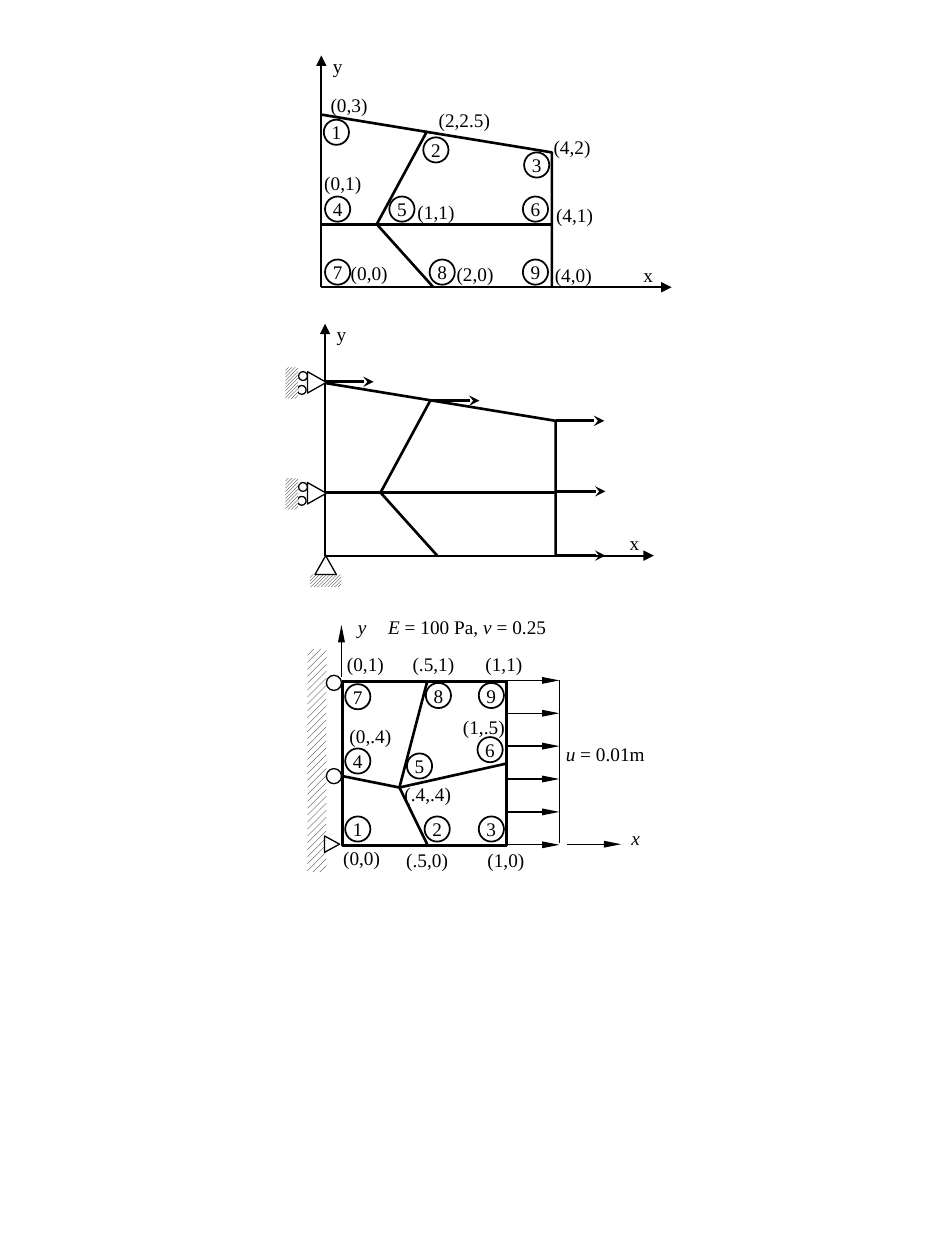
"""Build a page with three finite-element patch-test diagrams."""
from lxml.etree import SubElement
from pptx import Presentation
from pptx.dml.color import RGBColor
from pptx.enum.dml import MSO_PATTERN
from pptx.enum.shapes import MSO_CONNECTOR, MSO_SHAPE
from pptx.enum.text import MSO_ANCHOR, PP_ALIGN
from pptx.oxml.ns import qn
from pptx.util import Inches, Pt

COLUMNS, ROWS = 75, 100
BLACK, WHITE = "000000", "FFFFFF"


def colour(value):
    return RGBColor.from_string(value)


class Diagram:
    """Draws diagram parts on a grid of 75 columns by 100 rows."""

    font, size = "Times New Roman", 11
    thin, medium, thick = 0.75, 1, 1.5

    def __init__(self, deck, page):
        self.page = page
        self.column = deck.slide_width / COLUMNS
        self.row = deck.slide_height / ROWS

    def start_group(self):
        self.shapes = self.page.shapes.add_group_shape().shapes

    def place(self, left, top):
        return round(left * self.column), round(top * self.row)

    def outline(self, shape, width):
        shape.line.color.rgb = colour(BLACK)
        shape.line.width = Pt(width)

    def set_text(self, frame, spans, align):
        frame.margin_left = frame.margin_right = frame.margin_top = frame.margin_bottom = 0
        frame.word_wrap = True
        para = frame.paragraphs[0]
        para.alignment = align
        para.font.name, para.font.size = self.font, Pt(self.size)
        para.font.color.rgb = colour(BLACK)
        for text, italic in spans:
            span = para.add_run()
            span.text = text
            if italic:
                span.font.italic = True

    def label(self, text, left, top, width=4.8, height=1.8, italic=False):
        self.formula([(text, italic)], left, top, width, height, PP_ALIGN.CENTER)

    def formula(self, spans, left, top, width, height, align=PP_ALIGN.LEFT):
        box = self.shapes.add_textbox(*self.place(left, top), *self.place(width, height))
        self.set_text(box.text_frame, spans, align)

    def shape(self, kind, left, top, width, height, line=thin, rotation=0):
        shape = self.shapes.add_shape(kind, *self.place(left, top), *self.place(width, height))
        shape.shadow.inherit = False
        shape.rotation = rotation
        shape.fill.solid()
        shape.fill.fore_color.rgb = colour(WHITE)
        self.outline(shape, line)
        return shape

    def hatch(self, pattern, left, top, width, height, rotation=0):
        ground = self.shape(MSO_SHAPE.RECTANGLE, left, top, width, height, rotation=rotation)
        ground.fill.patterned()
        ground.fill.pattern = pattern
        ground.fill.fore_color.rgb = colour(BLACK)
        ground.fill.back_color.rgb = colour(WHITE)
        ground.line.fill.background()

    def node(self, number, left, top):
        circle = self.shape(MSO_SHAPE.OVAL, left, top, 2, 2, self.medium)
        circle.fill.background()
        circle.text_frame.vertical_anchor = MSO_ANCHOR.MIDDLE
        self.set_text(circle.text_frame, [(str(number), False)], PP_ALIGN.CENTER)

    def nodes(self, places):
        for number, (left, top) in enumerate(places, 1):
            self.node(number, left, top)

    def line(self, start, end, width, head=None, head_width="med", head_length="med"):
        line = self.shapes.add_connector(
            MSO_CONNECTOR.STRAIGHT, *self.place(*start), *self.place(*end))
        self.outline(line, width)
        properties = line._element.spPr
        if head:
            SubElement(properties.get_or_add_ln(), qn("a:tailEnd"),
                       type=head, w=head_width, len=head_length)
        SubElement(properties, qn("a:effectLst"))

    def slim_arrow(self, start, end):
        self.line(start, end, self.thin, "triangle", "sm", "lg")

    def path_line(self, *points):
        first, *others = [self.place(*point) for point in points]
        builder = self.shapes.build_freeform(*first)
        builder.add_line_segments(others, close=False)
        shape = builder.convert_to_shape()
        shape.shadow.inherit = False
        shape.fill.background()
        self.outline(shape, self.thick)

    def mesh(self, x, y, axis_length, x_label):
        self.line((x, y), (x + axis_length, y), self.medium, "triangle")
        self.line((x, y), (x, y - 18.4), self.medium, "triangle")
        self.path_line((x, y - 13.7), (x + 18.3, y - 10.7), (x + 18.3, y))
        self.line((x, y - 5), (x + 18.3, y - 5), self.thick)
        self.path_line((x + 8.9, y), (x + 4.4, y - 5), (x + 8.4, y - 12.4))
        self.label("x", x + x_label, y - 1.9, 1.9)
        self.label("y", x + 0.35, y - 18.5, 1.9, 2)


def draw_numbered_mesh(diagram):
    diagram.start_group()
    diagram.mesh(25.5, 22.8, 27.8, 25)
    for text, left, top in [
            ("(0,3)", 25.3, 7.4), ("(2,2.5)", 33.9, 8.6), ("(4,2)", 43, 10.7),
            ("(0,1)", 24.8, 13.6), ("(1,1)", 32.2, 15.9), ("(4,1)", 43.2, 16.1),
            ("(0,0)", 26.9, 20.7), ("(2,0)", 35.3, 20.8), ("(4,0)", 43.1, 20.9)]:
        diagram.label(text, left, top, 5.9 if text == "(2,2.5)" else 4.8)
    diagram.nodes([(25.7, 9.5), (33.6, 10.9), (41.6, 12.1),
                   (25.8, 15.6), (30.9, 15.6), (41.5, 15.6),
                   (25.8, 20.6), (34.1, 20.6), (41.5, 20.6)])


def draw_loaded_mesh(diagram):
    dense = MSO_PATTERN.DARK_UPWARD_DIAGONAL
    diagram.start_group()
    diagram.hatch(dense, 24.6, 45.6, 2.5, 1)
    diagram.mesh(25.8, 44.1, 26.1, 23.6)
    diagram.shape(MSO_SHAPE.ISOSCELES_TRIANGLE, 25, 44.1, 1.7, 1.5)
    for top in (29.6, 38.4):
        diagram.shape(MSO_SHAPE.ISOSCELES_TRIANGLE, 24.3, top, 1.7, 1.5, rotation=90)
        diagram.shape(MSO_SHAPE.OVAL, 23.6, top + 1, 0.7, 0.7)
        diagram.shape(MSO_SHAPE.OVAL, 23.7, top - 0.1, 0.7, 0.7)
        diagram.hatch(dense, 21.9, top + 0.3, 2.5, 1, rotation=90)
    for left, top in [(44.1, 33.4), (44.2, 39), (44.2, 44.1), (34.2, 31.8), (25.8, 30.3)]:
        diagram.line((left, top), (left + 3.85, top), diagram.thick, "stealth")


def draw_stretched_square(diagram):
    diagram.start_group()
    diagram.hatch(MSO_PATTERN.WIDE_UPWARD_DIAGONAL, 24.4, 51.5, 1.5, 17.7)
    for top in (61, 53.6):
        diagram.shape(MSO_SHAPE.OVAL, 25.9, top, 1.2, 1.2)
    diagram.shape(MSO_SHAPE.ISOSCELES_TRIANGLE, 25.7, 66.4, 1.3, 1.2, rotation=90)
    diagram.shape(MSO_SHAPE.RECTANGLE, 27.2, 54.1, 13, 13, diagram.thick)
    diagram.path_line((33.9, 67), (31.7, 62.5), (33.9, 54.1))
    diagram.path_line((27.2, 61.6), (31.7, 62.5), (40.2, 60.6))
    diagram.slim_arrow((45, 67), (49.3, 67))
    diagram.slim_arrow((27.1, 53.7), (27.1, 49.6))
    diagram.label("x", 49.7, 65.6, 1.5, 2.7, italic=True)
    diagram.label("y", 28, 48.8, 1.5, 2.7, italic=True)
    for text, left, top, width in [
            ("(1,0)", 37.7, 67.3, 4.9), ("(0,1)", 26.9, 51.8, 4.2),
            ("(1,.5)", 36, 56.8, 4.8), ("(1,1)", 37.7, 51.8, 4.6),
            ("(.5,1)", 31.8, 51.8, 5.2), ("(.5,0)", 31.5, 67.3, 4.8),
            ("(0,.4)", 27.2, 57.5, 4.4), ("(0,0)", 26.6, 67.2, 4.2),
            ("(.4,.4)", 31.7, 62.1, 4.5)]:
        diagram.label(text, left, top, width, 2.1)
    diagram.formula([("u", True), (" = 0.01m", False)], 44.9, 58.9, 7.5, 2.6)
    diagram.formula([("E", True), (" = 100 Pa, ", False), ("ν", True), (" = 0.25", False)],
                    30.8, 48.8, 17.1, 2.7)
    for step in range(6):
        top = 54 + 2.61 * step
        diagram.slim_arrow((40.2, top), (44.4, top))
    diagram.line((44.4, 54), (44.4, 66.9), diagram.thin)
    diagram.nodes([(27.4, 64.8), (33.7, 64.8), (38, 64.8),
                   (27.4, 59.4), (32.3, 59.8), (37.9, 58.5),
                   (27.4, 54.3), (33.8, 54.2), (38, 54.2)])


def main():
    deck = Presentation()
    deck.slide_width, deck.slide_height = Inches(7.5), Inches(10)
    page = deck.slides.add_slide(deck.slide_layouts[6])
    diagram = Diagram(deck, page)
    draw_numbered_mesh(diagram)
    draw_loaded_mesh(diagram)
    draw_stretched_square(diagram)
    deck.save("out.pptx")


if __name__ == "__main__":
    main()
